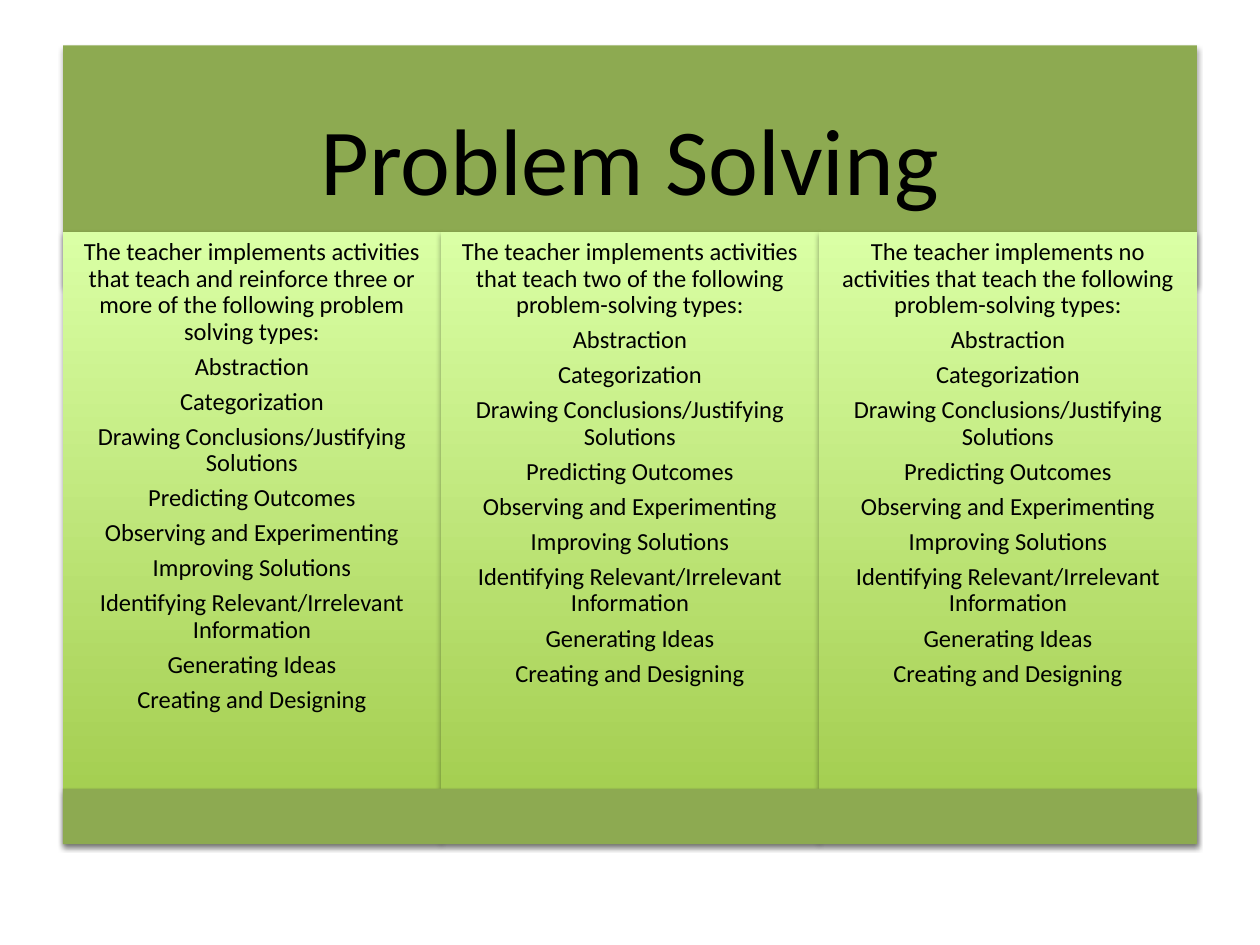
from pptx import Presentation
from pptx.dml.color import RGBColor
from pptx.enum.shapes import MSO_SHAPE
from pptx.enum.text import MSO_ANCHOR, MSO_AUTO_SIZE, PP_ALIGN
from pptx.oxml import parse_xml
from pptx.oxml.ns import nsdecls, qn
from pptx.util import Inches, Pt

RECTANGLE = MSO_SHAPE.RECTANGLE
TOP, MIDDLE = MSO_ANCHOR.TOP, MSO_ANCHOR.MIDDLE
NO_AUTOFIT = MSO_AUTO_SIZE.NONE
CENTER = PP_ALIGN.CENTER

BLACK = RGBColor(0x00, 0x00, 0x00)
OLIVE = RGBColor(0x8D, 0xAA, 0x51)
LIME = RGBColor(0xA0, 0xCA, 0x4A)
PALE_LIME = RGBColor(0xDA, 0xFF, 0xA5)

LEFT, WIDTH = 0.5, 9
COLUMN_TOP, COLUMN_HEIGHT = 1.84, 4.84
INTROS = [
    "The teacher implements activities that teach and reinforce three or more "
    "of the following problem solving types:",
    "The teacher implements activities that teach two of the following "
    "problem-solving types:",
    "The teacher implements no activities that teach the following "
    "problem-solving types:",
]
TYPES = [
    "Abstraction",
    "Categorization",
    "Drawing Conclusions/Justifying Solutions",
    "Predicting Outcomes",
    "Observing and Experimenting",
    "Improving Solutions",
    "Identifying Relevant/Irrelevant Information",
    "Generating Ideas",
    "Creating and Designing",
]


def write_text(box, lines, size=14, inset=0.06, anchor=TOP, font="Calibri", color=BLACK):
    """Fill a box with centred paragraphs in one format."""
    frame = box.text_frame
    frame.word_wrap = True
    frame.auto_size = NO_AUTOFIT
    frame.vertical_anchor = anchor
    frame.margin_left = frame.margin_right = Inches(inset)
    frame.margin_top = frame.margin_bottom = Inches(inset)
    for index, line in enumerate(lines):
        para = frame.add_paragraph() if index else frame.paragraphs[0]
        para.alignment = CENTER
        para.line_spacing = 0.9
        para.space_before = Pt(0)
        para.space_after = Pt(size * 0.35)
        span = para.add_run()
        span.text = line
        span.font.name = font
        span.font.size = Pt(size)
        span.font.color.rgb = color


class RubricPage:
    """Hold the panel style and the current slide."""

    def __init__(self, deck):
        self.page = deck.slides.add_slide(deck.slide_layouts[5])

    def add_shadow(self, box):
        """Give a box a soft shadow below it."""
        box.shadow.inherit = False
        effects = box._element.spPr.find(qn("a:effectLst"))
        effects.append(parse_xml(
            f'<a:outerShdw {nsdecls("a")} blurRad="{Pt(3.1)}" dist="{Pt(1.8)}" '
            'dir="5400000" rotWithShape="0"><a:srgbClr val="000000">'
            '<a:alpha val="35000"/></a:srgbClr></a:outerShdw>'))

    def style_band(self, box):
        """Paint a box as a plain olive band."""
        box.fill.solid()
        box.fill.fore_color.rgb = OLIVE
        box.line.fill.background()
        self.add_shadow(box)

    def add_rectangle(self, left, top, width, height):
        """Add a rectangle measured in inches."""
        return self.page.shapes.add_shape(
            RECTANGLE, Inches(left), Inches(top), Inches(width), Inches(height))

    def add_title(self, text, top, height):
        """Turn the title placeholder into the heading band."""
        title = self.page.shapes.title
        title.left, title.top = Inches(LEFT), Inches(top)
        title.width, title.height = Inches(WIDTH), Inches(height)
        self.style_band(title)
        write_text(title, [text], size=54, inset=0.23, anchor=MIDDLE)

    def add_column(self, left, width, lines):
        """Add a gradient column of text."""
        column = self.add_rectangle(left, COLUMN_TOP, width, COLUMN_HEIGHT)
        column.fill.gradient()
        column.fill.gradient_angle = 90
        for stop, color in zip(column.fill.gradient_stops, (LIME, PALE_LIME)):
            stop.color.rgb = color
        column.line.fill.background()
        self.add_shadow(column)
        write_text(column, lines)

    def add_footer(self, top, height):
        """Add the closing band."""
        self.style_band(self.add_rectangle(LEFT, top, WIDTH, height))


def main():
    """Build and save the slide."""
    deck = Presentation()
    deck.slide_width, deck.slide_height = Inches(10), Inches(7.5)
    rubric = RubricPage(deck)
    rubric.add_title("Problem Solving", 0.36, 1.9)
    width = WIDTH / len(INTROS)
    for index, intro in enumerate(INTROS):
        rubric.add_column(LEFT + index * width, width, [intro, *TYPES])
    rubric.add_footer(6.26, 0.44)
    deck.save("out.pptx")


if __name__ == "__main__":
    main()
